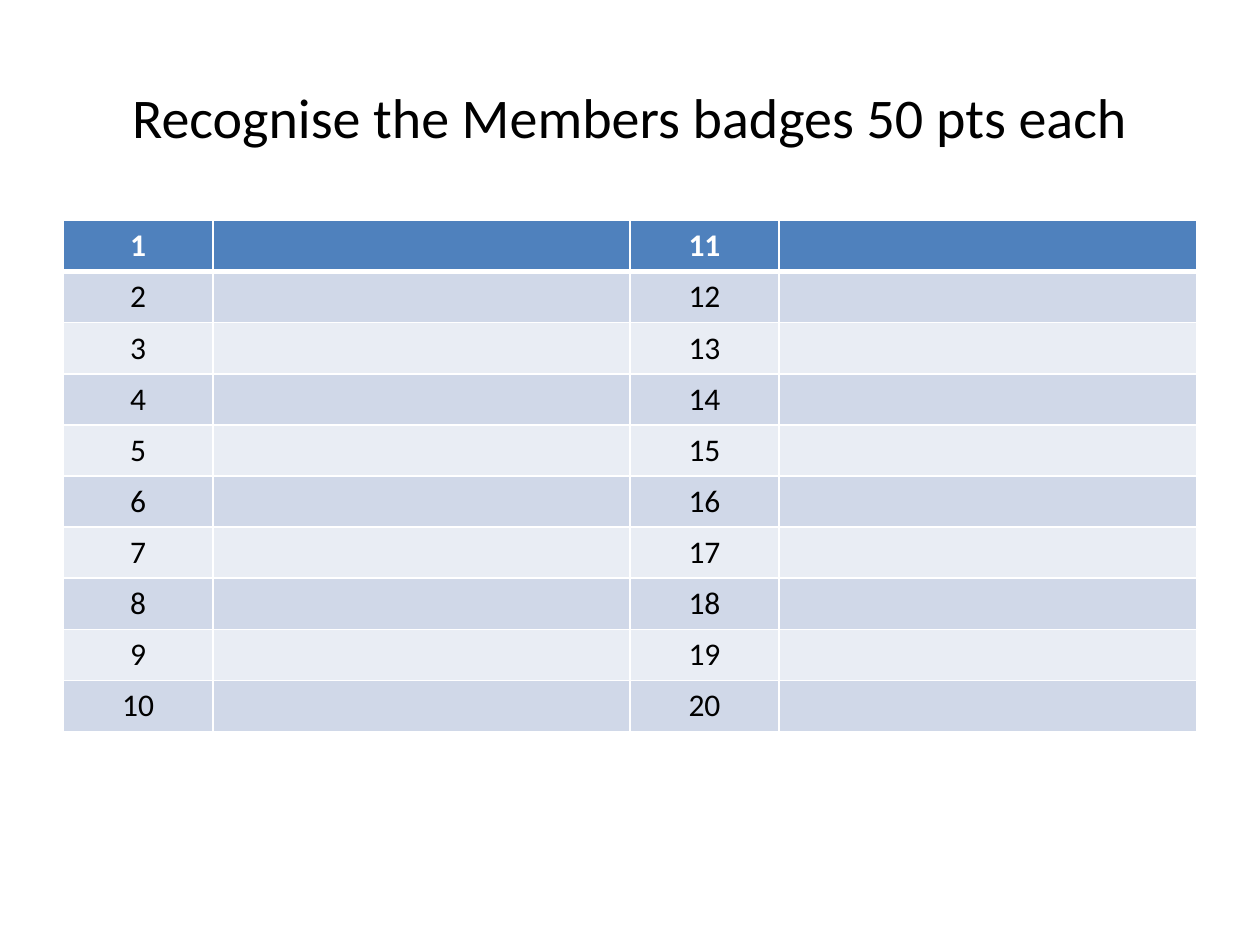
"""Build a badge quiz answer sheet with twenty numbered spaces."""
from dataclasses import dataclass
from typing import Any

from lxml import etree
from pptx import Presentation
from pptx import util as u
from pptx.dml.color import RGBColor
from pptx.enum import text
from pptx.oxml import ns


@dataclass(frozen=True)
class Theme:
    font: str = "Calibri"
    title_size: int = 32
    cell_size: int = 18
    ink: str = "000000"
    paper: str = "FFFFFF"
    header: str = "4F81BD"
    bands: tuple[str, str] = ("E9EDF4", "D0D8E8")
    rule: float = 1
    header_rule: float = 3


@dataclass(frozen=True)
class Area:
    left: float
    top: float
    width: float
    height: float


THEME = Theme()
WIDTH, HEIGHT = u.Inches(10), u.Inches(7.5)
TITLE_AREA = Area(0.05, 0.04, 0.9, 1 / 6)
TABLE_AREA = Area(0.05, 7 / 30, 0.9, 0.54)
COLUMN_SHARES = (0.1325, 0.3675, 0.1315, 0.3685)
ROWS = 10


def place(area: Area) -> dict[str, int]:
    """Turn shares of the slide into lengths."""
    return {
        "left": round(area.left * WIDTH),
        "top": round(area.top * HEIGHT),
        "width": round(area.width * WIDTH),
        "height": round(area.height * HEIGHT),
    }


def apply(target: Any, values: dict[str, Any]) -> None:
    """Set each named attribute on the target."""
    for name, value in values.items():
        setattr(target, name, value)


def write(para: Any, words: str, size: int, color: str, bold: bool) -> None:
    """Write one centred, formatted run."""
    para.alignment = text.PP_ALIGN.CENTER
    span = para.add_run()
    span.text = words
    apply(span.font, {"name": THEME.font, "size": u.Pt(size), "bold": bold})
    span.font.color.rgb = RGBColor.from_string(color)


def add_border(cell: Any, side: str, points: float) -> None:
    """Draw one side of a cell in the paper colour."""
    properties = cell._tc.get_or_add_tcPr()
    line = etree.SubElement(properties, ns.qn(f"a:ln{side}"), w=str(u.Pt(points)))
    fill = etree.SubElement(line, ns.qn("a:solidFill"))
    etree.SubElement(fill, ns.qn("a:srgbClr"), val=THEME.paper)


def format_cell(cell: Any, row: int) -> None:
    """Give a cell its borders and its header or band fill."""
    heavy_side = {0: "B", 1: "T"}.get(row)
    for side in "LRTB":
        add_border(cell, side, THEME.header_rule if side == heavy_side else THEME.rule)
    cell.fill.solid()
    color = THEME.bands[row % 2] if row else THEME.header
    cell.fill.fore_color.rgb = RGBColor.from_string(color)


def add_title(page: Any, words: str) -> None:
    """Place and format the title placeholder."""
    box = page.shapes.title
    apply(box, place(TITLE_AREA))
    apply(box.text_frame, {"word_wrap": True, "vertical_anchor": text.MSO_ANCHOR.MIDDLE})
    write(box.text_frame.paragraphs[0], words, THEME.title_size, THEME.ink, False)


def add_answer_table(page: Any) -> None:
    """Add the table with a number beside each answer space."""
    area = place(TABLE_AREA)
    table = page.shapes.add_table(ROWS, len(COLUMN_SHARES), **area).table
    for column, share in zip(table.columns, COLUMN_SHARES):
        column.width = round(area["width"] * share)
    for row in range(ROWS):
        for column in range(len(COLUMN_SHARES)):
            cell = table.cell(row, column)
            format_cell(cell, row)
            if column % 2 == 0:
                number = row + 1 + ROWS * (column // 2)
                color = THEME.ink if row else THEME.paper
                write(cell.text_frame.paragraphs[0], str(number),
                      THEME.cell_size, color, row == 0)


def main() -> None:
    """Create and save the deck."""
    deck = Presentation()
    apply(deck, {"slide_width": WIDTH, "slide_height": HEIGHT})
    page = deck.slides.add_slide(deck.slide_layouts.get_by_name("Title Only"))
    add_title(page, "Recognise the Members badges 50 pts each")
    add_answer_table(page)
    deck.save("out.pptx")


if __name__ == "__main__":
    main()
